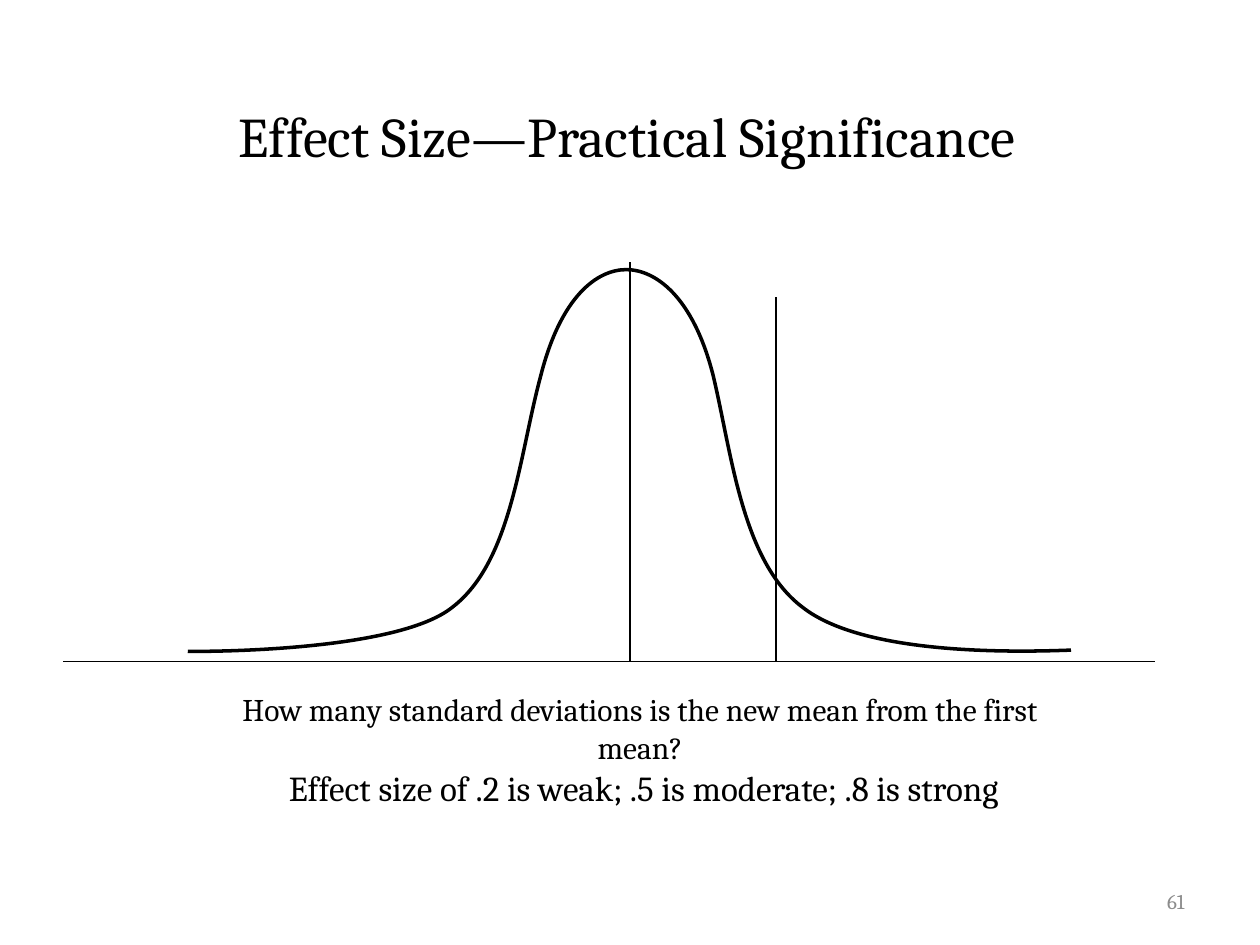
import pptx
import pptx.util
import pptx.dml.color
import pptx.enum.shapes
import pptx.enum.text
import pptx.oxml.ns
import lxml.etree

Inches = pptx.util.Inches
Pt = pptx.util.Pt
qn = pptx.oxml.ns.qn
ALIGN = pptx.enum.text.PP_ALIGN
ANCHOR = pptx.enum.text.MSO_ANCHOR

BLACK = pptx.dml.color.RGBColor(0x00, 0x00, 0x00)
GREY = pptx.dml.color.RGBColor(0x8C, 0x8C, 0x8C)
FONT = "Cambria"

# Bell curve inside its box, as inches from the top left: start, then cubic segments
CURVE_START = (7.01, 3.02)
CURVE_SEGMENTS = [
    ((6.49, 3.04), (5.35, 3.05), (4.88, 2.68)),
    ((4.40, 2.32), (4.32, 1.47), (4.17, 0.84)),
    ((4.01, 0.21), (3.71, 0.00), (3.48, 0.00)),
    ((3.25, 0.00), (2.96, 0.21), (2.80, 0.85)),
    ((2.63, 1.48), (2.57, 2.32), (2.10, 2.68)),
    ((1.64, 3.05), (0.00, 3.03), (0.00, 3.03)),
]


def add_text(slide, box, lines, align, color=BLACK, anchor=ANCHOR.TOP,
             insets=(0.1, 0.05, 0.1, 0.05)):
    """Place (text, size) lines of one paragraph in a box given in inches."""
    frame = slide.shapes.add_textbox(*map(Inches, box)).text_frame
    frame.word_wrap = True
    frame.vertical_anchor = anchor
    (frame.margin_left, frame.margin_top,
     frame.margin_right, frame.margin_bottom) = map(Inches, insets)
    paragraph = frame.paragraphs[0]
    paragraph.alignment = align
    paragraph.font.name = FONT
    paragraph.font.color.rgb = color
    for index, (text, size) in enumerate(lines):
        if index:
            paragraph.add_line_break()
        run = paragraph.add_run()
        run.text = text
        run.font.size = Pt(size)


def add_line(slide, start, end, width):
    line = slide.shapes.add_connector(
        pptx.enum.shapes.MSO_CONNECTOR.STRAIGHT, *map(Inches, start + end))
    line.line.color.rgb = BLACK
    line.line.width = Pt(width)
    lxml.etree.SubElement(line._element.spPr, qn("a:effectLst"))


def add_bell_curve(slide, left, top):
    anchors = [CURVE_START] + [segment[-1] for segment in CURVE_SEGMENTS]
    points = [(Inches(left + x), Inches(top + y)) for x, y in anchors]
    builder = slide.shapes.build_freeform(*points[0])
    builder.add_line_segments(points[1:], close=False)
    bell = builder.convert_to_shape()
    bell.shadow.inherit = False
    bell.fill.background()
    bell.line.color.rgb = BLACK
    bell.line.width = Pt(2)

    # Bend each straight segment into its cubic curve
    straights = list(bell._element.iter(qn("a:lnTo")))
    for straight, segment in zip(straights, CURVE_SEGMENTS):
        cubic = lxml.etree.Element(qn("a:cubicBezTo"))
        for x, y in segment:
            lxml.etree.SubElement(cubic, qn("a:pt"),
                                  x=str(Inches(x)), y=str(Inches(y)))
        straight.getparent().replace(straight, cubic)


def add_distribution(slide, left, top, width, height):
    """Draw the axis, both means and the bell curve in the given box."""
    axis = top + height
    first_mean = left + 4.5
    new_mean = left + 5.66
    add_line(slide, (left, axis), (left + width, axis), 1)
    add_line(slide, (first_mean, top), (first_mean, axis), 1)
    add_line(slide, (new_mean, axis), (new_mean, top + 0.28), 0.75)
    add_bell_curve(slide, left + 0.99, top + 0.06)


def main():
    deck = pptx.Presentation()
    deck.slide_width, deck.slide_height = Inches(10), Inches(7.5)
    slide = deck.slides.add_slide(deck.slide_layouts[6])

    # Title
    add_text(slide, (0.75, 0, 8.5, 2.15),
             [("Effect Size—Practical Significance", 32)],
             ALIGN.CENTER, anchor=ANCHOR.MIDDLE, insets=(0.1, 0.05, 0.14, 0.05))

    # Distribution with the two means
    add_distribution(slide, 0.5, 2.08, 8.67, 3.17)

    # Caption
    add_text(slide, (1.59, 5.48, 6.98, 0.64),
             [("How many standard deviations is the new mean from the first mean?", 18),
              (" Effect size of .2 is weak; .5 is moderate; .8 is strong", 20)],
             ALIGN.CENTER, insets=(0.04, 0, 0.04, 0))

    # Slide number
    add_text(slide, (7.17, 6.95, 2.33, 0.4), [("61", 12)],
             ALIGN.RIGHT, color=GREY, anchor=ANCHOR.MIDDLE)

    deck.save("out.pptx")


if __name__ == "__main__":
    main()
